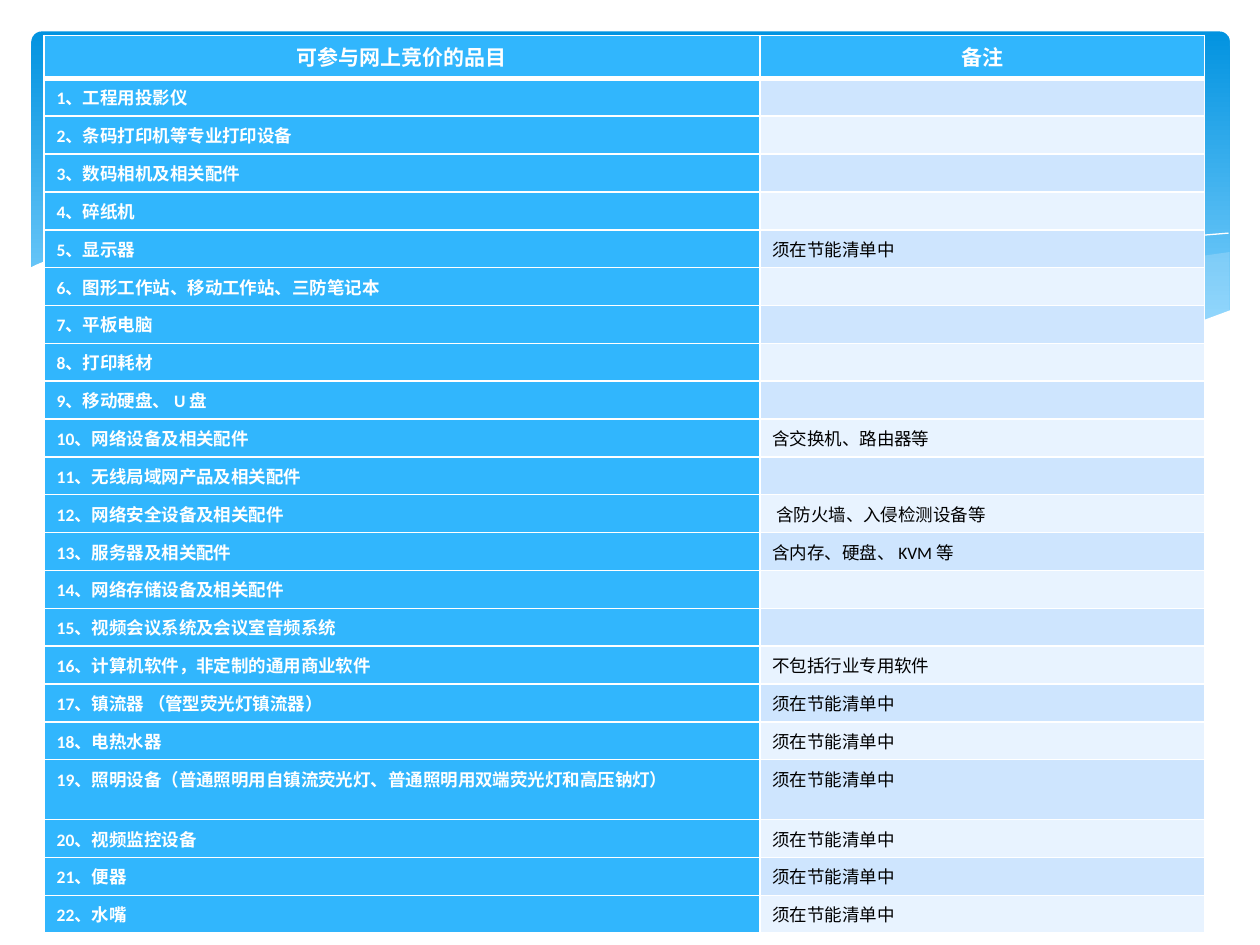
from dataclasses import dataclass

from lxml.etree import SubElement
from pptx import Presentation
from pptx.dml.color import RGBColor
from pptx.enum.shapes import MSO_SHAPE
from pptx.enum.text import PP_ALIGN
from pptx.oxml.ns import qn
from pptx.util import Inches, Pt

WHITE = RGBColor(0xFF, 0xFF, 0xFF)
BLACK = RGBColor(0x00, 0x00, 0x00)
DEEP_BLUE = RGBColor(0x02, 0x93, 0xE0)
LIGHT_BLUE = RGBColor(0x83, 0xD3, 0xFE)
WAVE_BLUE = RGBColor(0xC6, 0xE7, 0xFC)
ITEM_BLUE = RGBColor(0x31, 0xB6, 0xFD)
BAND_COLORS = (RGBColor(0xCE, 0xE5, 0xFE), RGBColor(0xE8, 0xF3, 0xFF))

FONT = "Calibri"
GRID_COLUMNS, GRID_ROWS = 10, 7.5
ENERGY_LIST = "须在节能清单中"
HEADINGS = ("可参与网上竞价的品目", "备注")
ITEMS = (
    ("工程用投影仪", ""),
    ("条码打印机等专业打印设备", ""),
    ("数码相机及相关配件", ""),
    ("碎纸机", ""),
    ("显示器", ENERGY_LIST),
    ("图形工作站、移动工作站、三防笔记本", ""),
    ("平板电脑", ""),
    ("打印耗材", ""),
    ("移动硬盘、 U 盘", ""),
    ("网络设备及相关配件", "含交换机、路由器等"),
    ("无线局域网产品及相关配件", ""),
    ("网络安全设备及相关配件", " 含防火墙、入侵检测设备等"),
    ("服务器及相关配件", "含内存、硬盘、 KVM 等"),
    ("网络存储设备及相关配件", ""),
    ("视频会议系统及会议室音频系统", ""),
    ("计算机软件，非定制的通用商业软件", "不包括行业专用软件"),
    ("镇流器 （管型荧光灯镇流器）", ENERGY_LIST),
    ("电热水器", ENERGY_LIST),
    ("照明设备（普通照明用自镇流荧光灯、普通照明用双端荧光灯和高压钠灯）", ENERGY_LIST),
    ("视频监控设备", ENERGY_LIST),
    ("便器", ENERGY_LIST),
    ("水嘴", ENERGY_LIST),
)
TALL_ITEM = 19

RIGHT_WAVE = (
    (9.76, 2), (9.48, 2.04), (9.06, 2.13), (8.61, 2.23), (8.05, 2.37), (7.29, 2.53),
    (6.61, 2.65), (7.05, 2.71), (7.57, 2.76), (8.03, 2.78), (8.54, 2.76), (8.97, 2.7),
    (9.35, 2.62), (9.63, 2.52), (9.76, 2.47),
)
MIDDLE_WAVE = (
    (8.93, 2.73), (8.37, 2.65), (7.75, 2.54), (7.06, 2.4), (6.29, 2.22), (5.84, 2.11),
    (5.41, 2.03), (4.89, 1.94), (4.42, 1.89), (3.99, 1.86), (3.61, 1.85), (3.28, 1.87),
    (2.86, 1.91), (3.42, 1.99), (4.04, 2.11), (4.49, 2.22), (5.3, 2.4), (6.01, 2.55),
    (6.65, 2.66), (7.22, 2.74), (7.73, 2.77), (8.18, 2.78), (8.57, 2.77),
)
LONG_CREST = (
    (3.09, 1.95), (3.35, 1.91), (3.74, 1.88), (4.16, 1.87), (4.69, 1.89), (5.33, 1.94),
    (6.08, 2.04), (6.65, 2.13), (7.27, 2.26), (7.95, 2.41), (8.69, 2.61), (9.07, 2.72),
)
SHORT_CREST = (
    (6.13, 2.57), (6.72, 2.41), (7.2, 2.29), (7.76, 2.16), (8.36, 2.04), (8.81, 1.96),
    (9.24, 1.9), (9.51, 1.87), (9.75, 1.85),
)
WHITE_WAVE = (
    (9.77, 2.46), (9.5, 2.56), (9.2, 2.65), (8.87, 2.71), (8.5, 2.75), (8.09, 2.77),
    (7.61, 2.75), (7.08, 2.7), (6.48, 2.62), (5.79, 2.5), (5.03, 2.33), (4.47, 2.2),
    (3.91, 2.07), (3.4, 1.97), (2.92, 1.9), (2.5, 1.86), (2.11, 1.84), (1.77, 1.84),
    (1.46, 1.85), (1.19, 1.87), (0.95, 1.91), (0.67, 1.97), (0.46, 2.03), (0.29, 2.1),
    (0.23, 2.13), (0.23, 3.29), (9.77, 3.29),
)


@dataclass
class Box:
    left: int
    top: int
    width: int
    height: int

    def point(self, column, row):
        return (
            int(self.left + self.width * column / GRID_COLUMNS),
            int(self.top + self.height * row / GRID_ROWS),
        )

    def region(self, column, row, columns, rows):
        left, top = self.point(column, row)
        right, bottom = self.point(column + columns, row + rows)
        return Box(left, top, right - left, bottom - top)


def add_outline(slide, box, points, closed):
    corners = [box.point(*point) for point in points]
    builder = slide.shapes.build_freeform(*corners[0], scale=1.0)
    builder.add_line_segments(corners[1:], close=closed)
    shape = builder.convert_to_shape()
    shape.shadow.inherit = False
    return shape


def add_wave(slide, box, points, color, opacity=100):
    wave = add_outline(slide, box, points, True)
    wave.fill.solid()
    wave.fill.fore_color.rgb = color
    wave.line.fill.background()
    if opacity < 100:
        color_element = wave.element.spPr.find(qn("a:solidFill"))[0]
        SubElement(color_element, qn("a:alpha"), val=str(opacity * 1000))


def add_crest(slide, box, points):
    crest = add_outline(slide, box, points, False)
    crest.fill.background()
    crest.line.color.rgb = WHITE
    crest.line.width = Pt(0)


def add_backdrop(slide, box):
    area = box.region(0.25, 0.25, 9.51, 2.7)
    panel = slide.shapes.add_shape(
        MSO_SHAPE.ROUNDED_RECTANGLE, area.left, area.top, area.width, area.height
    )
    panel.adjustments[0] = 0.03
    panel.shadow.inherit = False
    panel.line.fill.background()
    panel.fill.gradient()
    panel.fill.gradient_angle = 270
    stops = zip(panel.fill.gradient_stops, (DEEP_BLUE, LIGHT_BLUE), (0, 0.9))
    for stop, color, position in stops:
        stop.color.rgb = color
        stop.position = position
    add_wave(slide, box, RIGHT_WAVE, WAVE_BLUE, 29)
    add_wave(slide, box, MIDDLE_WAVE, WAVE_BLUE, 40)
    add_crest(slide, box, LONG_CREST)
    add_crest(slide, box, SHORT_CREST)
    add_wave(slide, box, WHITE_WAVE, WHITE)


def set_borders(cell, widths):
    properties = cell._tc.get_or_add_tcPr()
    for side, width in zip("LRTB", widths):
        line = SubElement(properties, qn(f"a:ln{side}"), w=str(int(Pt(width))))
        fill = SubElement(line, qn("a:solidFill"))
        SubElement(fill, qn("a:srgbClr"), val=str(WHITE))


def fill_cell(cell, text, fill, color, size, bold, alignment, widths):
    set_borders(cell, widths)
    cell.fill.solid()
    cell.fill.fore_color.rgb = fill
    cell.text_frame.text = text
    paragraph = cell.text_frame.paragraphs[0]
    paragraph.alignment = alignment
    for run in paragraph.runs:
        run.font.name = FONT
        run.font.size = Pt(size)
        run.font.bold = bold
        run.font.color.rgb = color
    if not text:
        SubElement(paragraph._p, qn("a:endParaRPr"), sz=str(size * 100))


def add_item_table(slide, box):
    frame = slide.shapes.add_table(
        len(ITEMS) + 1, len(HEADINGS), box.left, box.top, box.width, box.height
    )
    table = frame.table
    table.columns[0].width = int(box.width * 5.68 / 9.21)
    table.columns[1].width = box.width - table.columns[0].width
    row_height = int(box.height / (len(ITEMS) + 1.6))
    for number, row in enumerate(table.rows):
        row.height = int(row_height * (1.6 if number == TALL_ITEM else 1))
    for column, heading in enumerate(HEADINGS):
        fill_cell(table.cell(0, column), heading, ITEM_BLUE, WHITE, 12, True,
                  PP_ALIGN.CENTER, (1, 1, 1, 3))
    for number, (item, note) in enumerate(ITEMS, 1):
        widths = (1, 1, 3 if number == 1 else 1, 1)
        fill_cell(table.cell(number, 0), f"{number}、{item}", ITEM_BLUE, WHITE, 10, True,
                  PP_ALIGN.LEFT, widths)
        fill_cell(table.cell(number, 1), note, BAND_COLORS[(number - 1) % 2], BLACK, 10,
                  False, PP_ALIGN.LEFT, widths)


def main():
    presentation = Presentation()
    presentation.slide_width = Inches(10)
    presentation.slide_height = Inches(7.5)
    slide = presentation.slides.add_slide(presentation.slide_layouts[6])
    page = Box(0, 0, presentation.slide_width, presentation.slide_height)
    add_backdrop(slide, page)
    add_item_table(slide, page.region(0.35, 0.28, 9.21, 7.02))
    presentation.save("out.pptx")


if __name__ == "__main__":
    main()
